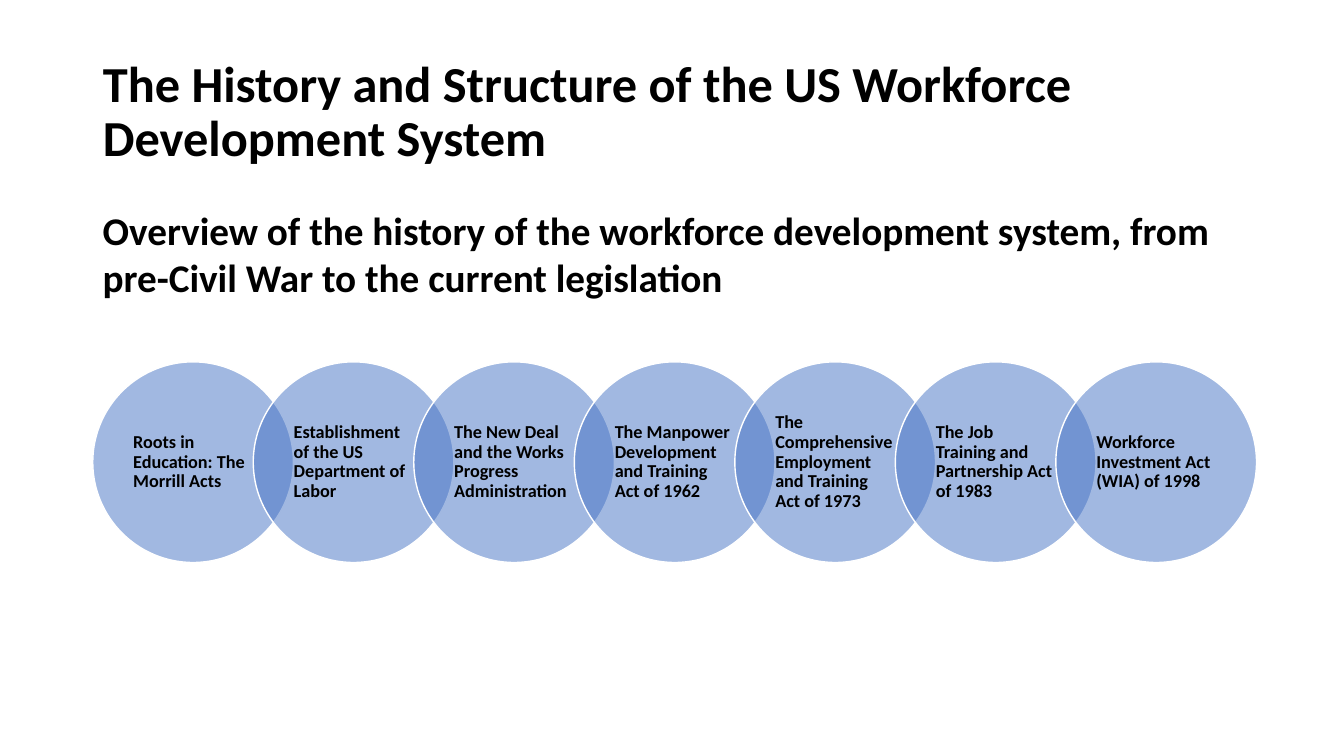
from lxml.etree import SubElement as add_sub
from pptx import Presentation
from pptx.dml.color import RGBColor as Rgb
from pptx.enum.shapes import MSO_SHAPE as Shape
from pptx.enum.text import MSO_ANCHOR as Anchor, MSO_AUTO_SIZE as Fit, PP_ALIGN as Align
from pptx.oxml.ns import qn
from pptx.util import Pt

# Content
TITLE = "The History and Structure of the US Workforce Development System"
LEAD = ("Overview of the history of the workforce development system, "
        "from pre-Civil War to the current legislation")
ACTS = [
    "Roots in Education: The Morrill Acts",
    "Establishment of the US Department of Labor",
    "The New Deal and the Works Progress Administration",
    "The Manpower Development and Training Act of 1962",
    "The Comprehensive Employment and Training Act of 1973",
    "The Job Training and Partnership Act of 1983",
    "Workforce Investment Act (WIA) of 1998",
]
COLORS = {"text": "000000", "disc": "4472C4", "edge": "FFFFFF"}
FONT = "Calibri"

# Layout in px, 100 to the inch
PX = 9144
WIDE, HIGH = 1333, 750
LEFT, SPAN = 92, 1150
DISC, TOP = 199, 359
STEP = DISC * 0.8  # neighbours overlap by a fifth


def px(*vals):
    return [round(v * PX) for v in vals]


def color(name):
    return Rgb.from_string(COLORS[name])


def write(shape, text, size, anchor, pad, lines=1.0, after=0):
    frame = shape.text_frame
    frame.word_wrap = True
    frame.auto_size = Fit.NONE
    frame.vertical_anchor = anchor
    side, edge = px(*pad)
    frame.margin_left = frame.margin_right = side
    frame.margin_top = frame.margin_bottom = edge
    para = frame.paragraphs[0]
    para.alignment = Align.LEFT
    para.line_spacing = lines
    para.space_before = Pt(0)
    para.space_after = Pt(after)
    run = para.add_run()
    run.text = text
    font = run.font
    font.name, font.size, font.bold = FONT, Pt(size), True
    font.color.rgb = color("text")


def add_disc(slide, x, text):
    disc = slide.shapes.add_shape(Shape.OVAL, *px(x, TOP, DISC, DISC))
    disc.shadow.inherit = False
    disc.fill.solid()
    disc.fill.fore_color.rgb = color("disc")
    tint = disc.fill._xPr.find(qn("a:solidFill"))[0]
    add_sub(tint, qn("a:alpha"), val="50000")
    disc.line.color.rgb = color("edge")
    disc.line.width = Pt(1)
    write(disc, text, 13, Anchor.MIDDLE, (11, 2), 0.9, 4.5)


def main():
    deck = Presentation()
    deck.slide_width, deck.slide_height = px(WIDE, HIGH)
    slide = deck.slides.add_slide(deck.slide_layouts[5])

    # Title and lead text
    title = slide.shapes.title
    title.left, title.top, title.width, title.height = px(LEFT, 40, SPAN, 145)
    write(title, TITLE, 36, Anchor.MIDDLE, (10, 5), 0.9)
    lead = slide.shapes.add_textbox(*px(LEFT, 200, SPAN, 120))
    write(lead, LEAD, 28, Anchor.TOP, (10, 5), after=6)

    # Chain of overlapping discs
    for i, act in enumerate(ACTS):
        add_disc(slide, LEFT + i * STEP, act)

    deck.save("out.pptx")


if __name__ == "__main__":
    main()
